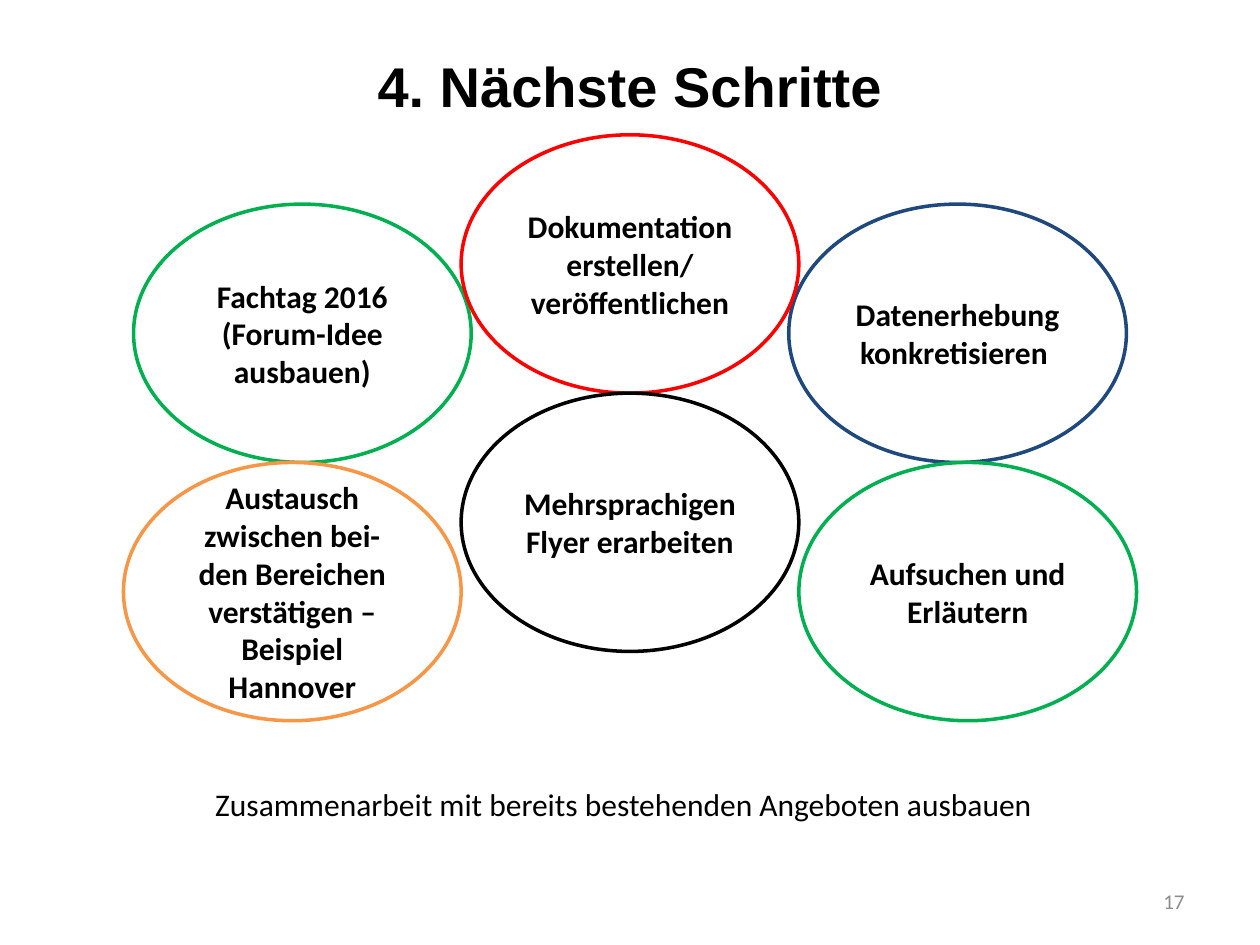
from dataclasses import dataclass

from pptx import Presentation
from pptx.dml.color import RGBColor
from pptx.enum.shapes import MSO_SHAPE as Shape
from pptx.enum.text import MSO_ANCHOR as Anchor, PP_ALIGN as Align
from pptx.util import Inches, Pt


@dataclass(frozen=True)
class Theme:
    black: str = "000000"
    white: str = "FFFFFF"
    grey: str = "8C8C8C"
    green: str = "00B050"
    blue: str = "1F497D"
    red: str = "FF0000"
    orange: str = "F79646"
    heading_font: str = "Arial"
    body_font: str = "Calibri"
    heading_size: int = 32
    body_size: int = 18
    number_size: int = 12
    outline: int = 2


THEME = Theme()
WIDTH, HEIGHT = 10, 7.5

# Ellipse grid: columns are centred on the page, rows touch each other
OVAL_WIDTH, OVAL_HEIGHT = 2.68, 2.05
MIDDLE_TOP, OUTER_TOP = 1.07, 1.62
OVERLAP = 0.08  # the upper outer ellipses reach into the middle one

# Column (-1, 0, 1), row, outline colour, paragraphs
STEPS = [
    (-1, 0, THEME.green, ["Fachtag 2016", "(Forum-Idee ausbauen)"]),
    (1, 0, THEME.blue, ["Datenerhebung konkretisieren "]),
    (0, 0, THEME.red, ["Dokumentation erstellen/ veröffentlichen"]),
    (0, 1, THEME.black, ["Mehrsprachigen Flyer erarbeiten"]),
    (-1, 1, THEME.orange,
     ["Austausch zwischen bei-den Bereichen verstätigen – Beispiel Hannover"]),
    (1, 1, THEME.green, ["Aufsuchen und Erläutern"]),
]


def set_values(target, values):
    for name, value in values.items():
        setattr(target, name, value)


def write(box, lines, align, color=THEME.black, anchor=Anchor.MIDDLE,
          wrap=True, **font):
    frame = box.text_frame
    set_values(frame, {"word_wrap": wrap, "vertical_anchor": anchor})
    values = {"name": THEME.body_font, "size": Pt(THEME.body_size),
              "bold": False} | font
    for index, line in enumerate(lines):
        para = frame.add_paragraph() if index else frame.paragraphs[0]
        para.alignment = align
        span = para.add_run()
        span.text = line
        set_values(span.font, values)
        span.font.color.rgb = RGBColor.from_string(color)


def add_text(page, area, line, align, **format_values):
    box = page.shapes.add_textbox(*map(Inches, area))
    write(box, [line], align, **format_values)


def add_step(page, column, row, color, lines):
    pitch = OVAL_WIDTH - (OVERLAP if row == 0 else 0)
    left = (WIDTH - OVAL_WIDTH) / 2 + column * pitch
    top = (OUTER_TOP if column else MIDDLE_TOP) + row * OVAL_HEIGHT
    oval = page.shapes.add_shape(
        Shape.OVAL, *map(Inches, (left, top, OVAL_WIDTH, OVAL_HEIGHT)))
    oval.shadow.inherit = False
    oval.fill.solid()
    oval.fill.fore_color.rgb = RGBColor.from_string(THEME.white)
    oval.line.color.rgb = RGBColor.from_string(color)
    oval.line.width = Pt(THEME.outline)
    write(oval, lines, Align.CENTER, bold=True)


def main():
    deck = Presentation()
    set_values(deck, {"slide_width": Inches(WIDTH),
                      "slide_height": Inches(HEIGHT)})
    page = deck.slides.add_slide(deck.slide_layouts[6])

    # Heading and page number
    margin = 0.05 * WIDTH
    add_text(page, (margin, 0.29, WIDTH - 2 * margin, 0.77),
             "4. Nächste Schritte", Align.CENTER, bold=True,
             name=THEME.heading_font, size=Pt(THEME.heading_size))
    add_text(page, (7.17, 6.95, 2.33, 0.4), "17", Align.RIGHT,
             color=THEME.grey, size=Pt(THEME.number_size))

    # Six next steps
    for step in STEPS:
        add_step(page, *step)

    # Closing line
    add_text(page, (1.61, 6.18, 6.76, 0.4),
             "Zusammenarbeit mit bereits bestehenden Angeboten ausbauen",
             Align.LEFT, anchor=Anchor.TOP, wrap=False)

    deck.save("out.pptx")


if __name__ == "__main__":
    main()
